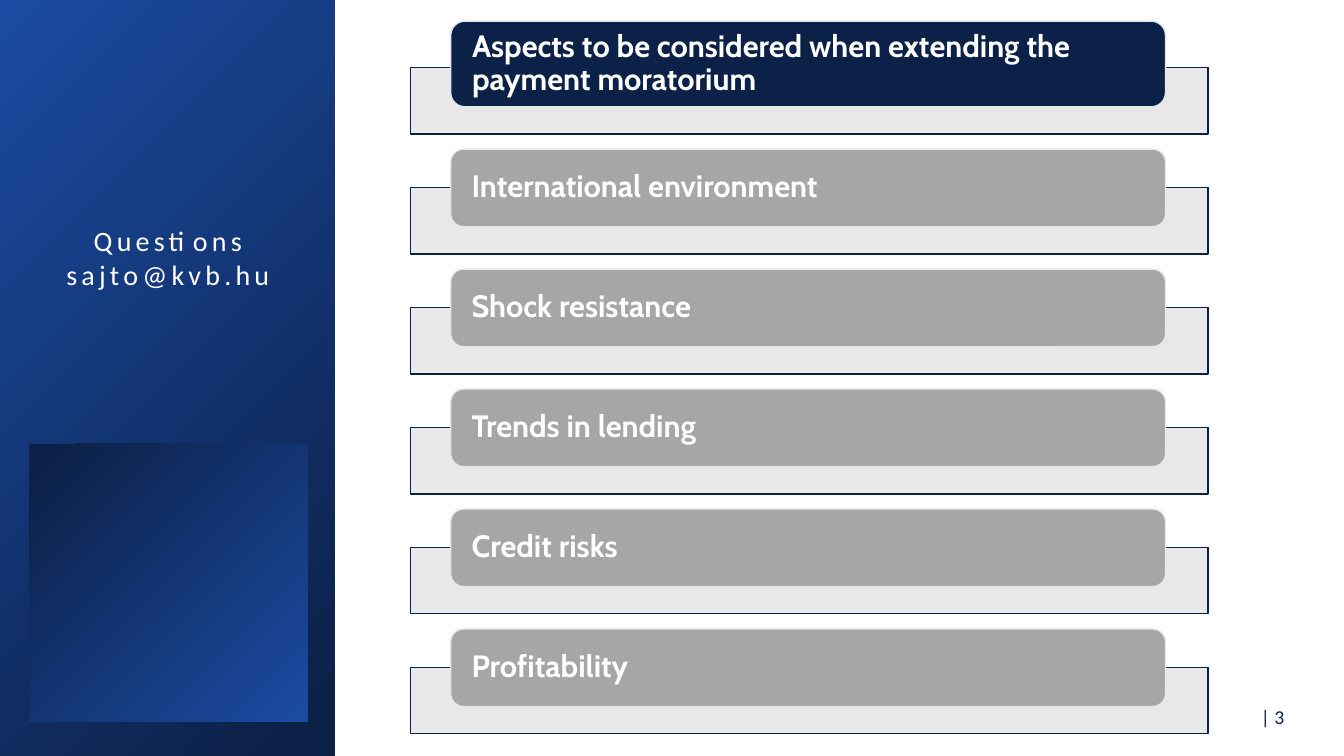
from dataclasses import dataclass

import pptx
import pptx.dml.color
import pptx.enum.shapes
import pptx.enum.text
import pptx.oxml.ns
import pptx.util
from lxml import etree

SHAPE = pptx.enum.shapes.MSO_SHAPE
ALIGN = pptx.enum.text.PP_ALIGN
ANCHOR = pptx.enum.text.MSO_ANCHOR


@dataclass(frozen=True)
class Theme:
    navy: str = "0C2148"
    blue: str = "1B4BA3"
    grey: str = "A6A6A6"
    pale: str = "E7E6E6"
    white: str = "FFFFFF"
    body: str = "Calibri"
    heading: str = "Cabin"
    topic_size: int = 22
    contact_size: int = 20
    number_size: int = 14


@dataclass(frozen=True)
class Box:
    left: float
    top: float
    width: float
    height: float

    def emu(self) -> list:
        return [pptx.util.Inches(v) for v in (self.left, self.top, self.width, self.height)]


@dataclass(frozen=True)
class Grid:
    """Topic rows: a wide bar with a pill overlapping its upper part."""
    left: float = 4.07
    top: float = 0.67
    pitch: float = 1.19
    width: float = 7.91
    bar_height: float = 0.66
    indent: float = 0.4
    pill_width: float = 7.09
    overlap: float = 0.39

    def bar(self, row: int) -> Box:
        return Box(self.left, self.top + row * self.pitch, self.width, self.bar_height)

    def pill(self, row: int, height: float) -> Box:
        bottom = self.top + row * self.pitch + self.overlap
        return Box(self.left + self.indent, bottom - height, self.pill_width, height)


@dataclass(frozen=True)
class Topic:
    text: str
    fill: str
    height: float = 0.77


THEME = Theme()
GRID = Grid()
WIDTH, HEIGHT = 13.33, 7.5
TOPICS = [
    Topic("Aspects to be considered when extending the payment moratorium", THEME.navy, 0.85),
    Topic("International environment", THEME.grey),
    Topic("Shock resistance", THEME.grey),
    Topic("Trends in lending", THEME.grey),
    Topic("Credit risks", THEME.grey),
    Topic("Profitability", THEME.grey),
]
CONTACT = ["Questions", "sajto@kvb.hu"]


def rgb(code: str) -> pptx.dml.color.RGBColor:
    return pptx.dml.color.RGBColor.from_string(code)


def add_shape(s, kind, box: Box):
    sp = s.shapes.add_shape(kind, *box.emu())
    sp.shadow.inherit = False
    return sp


def add_gradient(s, box: Box, rotation: int = 0) -> None:
    sp = add_shape(s, SHAPE.RECTANGLE, box)
    sp.rotation = rotation
    sp.line.fill.background()
    sp.fill.gradient()
    sp.fill.gradient_angle = 135
    stops = ((0.06, THEME.navy), (1.0, THEME.blue))
    for stop, (position, color) in zip(sp.fill.gradient_stops, stops):
        stop.position = position
        stop.color.rgb = rgb(color)


def add_filled(s, kind, box: Box, fill: str, line: str, opacity: int = 100):
    sp = add_shape(s, kind, box)
    sp.fill.solid()
    sp.fill.fore_color.rgb = rgb(fill)
    sp.line.color.rgb = rgb(line)
    sp.line.width = pptx.util.Pt(1)
    if opacity < 100:
        clr = sp.fill._xPr.find(".//" + pptx.oxml.ns.qn("a:srgbClr"))
        etree.SubElement(clr, pptx.oxml.ns.qn("a:alpha"), val=str(opacity * 1000))
    return sp


def add_run(p, text: str, font: str, size: int, color: str, bold: bool = False,
            spacing: int = 0) -> None:
    r = p.add_run()
    r.text = text
    r.font.name = font
    r.font.size = pptx.util.Pt(size)
    r.font.bold = bold
    r.font.color.rgb = rgb(color)
    if spacing:
        r._r.get_or_add_rPr().set("spc", str(spacing * 100))


def add_text_frame(s, box: Box, anchor):
    tf = s.shapes.add_textbox(*box.emu()).text_frame
    tf.word_wrap = True
    tf.vertical_anchor = anchor
    return tf


def add_topic(s, row: int, topic: Topic) -> None:
    add_filled(s, SHAPE.RECTANGLE, GRID.bar(row), THEME.pale, THEME.navy, opacity=90)
    sp = add_filled(s, SHAPE.ROUNDED_RECTANGLE, GRID.pill(row, topic.height),
                    topic.fill, THEME.pale)
    tf = sp.text_frame
    tf.word_wrap = True
    tf.vertical_anchor = ANCHOR.MIDDLE
    tf.margin_left = tf.margin_right = pptx.util.Inches(0.17)
    tf.margin_top = tf.margin_bottom = 0
    p = tf.paragraphs[0]
    p.alignment = ALIGN.LEFT
    p.line_spacing = 0.9
    add_run(p, topic.text, THEME.heading, THEME.topic_size, THEME.white, bold=True)


def main() -> None:
    prs = pptx.Presentation()
    prs.slide_width = pptx.util.Inches(WIDTH)
    prs.slide_height = pptx.util.Inches(HEIGHT)
    s = prs.slides.add_slide(prs.slide_layouts[6])

    # Side panel
    add_gradient(s, Box(-0.01, 0, WIDTH / 4, HEIGHT))
    add_gradient(s, Box(0.29, 4.4, 2.76, 2.76), rotation=180)

    # Contact
    tf = add_text_frame(s, Box(0.4, 2.17, 2.53, 0.77), ANCHOR.TOP)
    for i, line in enumerate(CONTACT):
        p = tf.add_paragraph() if i else tf.paragraphs[0]
        p.alignment = ALIGN.CENTER
        add_run(p, line, THEME.body, THEME.contact_size, THEME.white, spacing=3)

    # Page number
    tf = add_text_frame(s, Box(12.19, 6.9, 0.69, 0.41), ANCHOR.MIDDLE)
    p = tf.paragraphs[0]
    p.alignment = ALIGN.RIGHT
    add_run(p, "| 3 ", THEME.body, THEME.number_size, THEME.navy)

    # Topics
    for row, topic in enumerate(TOPICS):
        add_topic(s, row, topic)

    prs.save("out.pptx")


if __name__ == "__main__":
    main()
